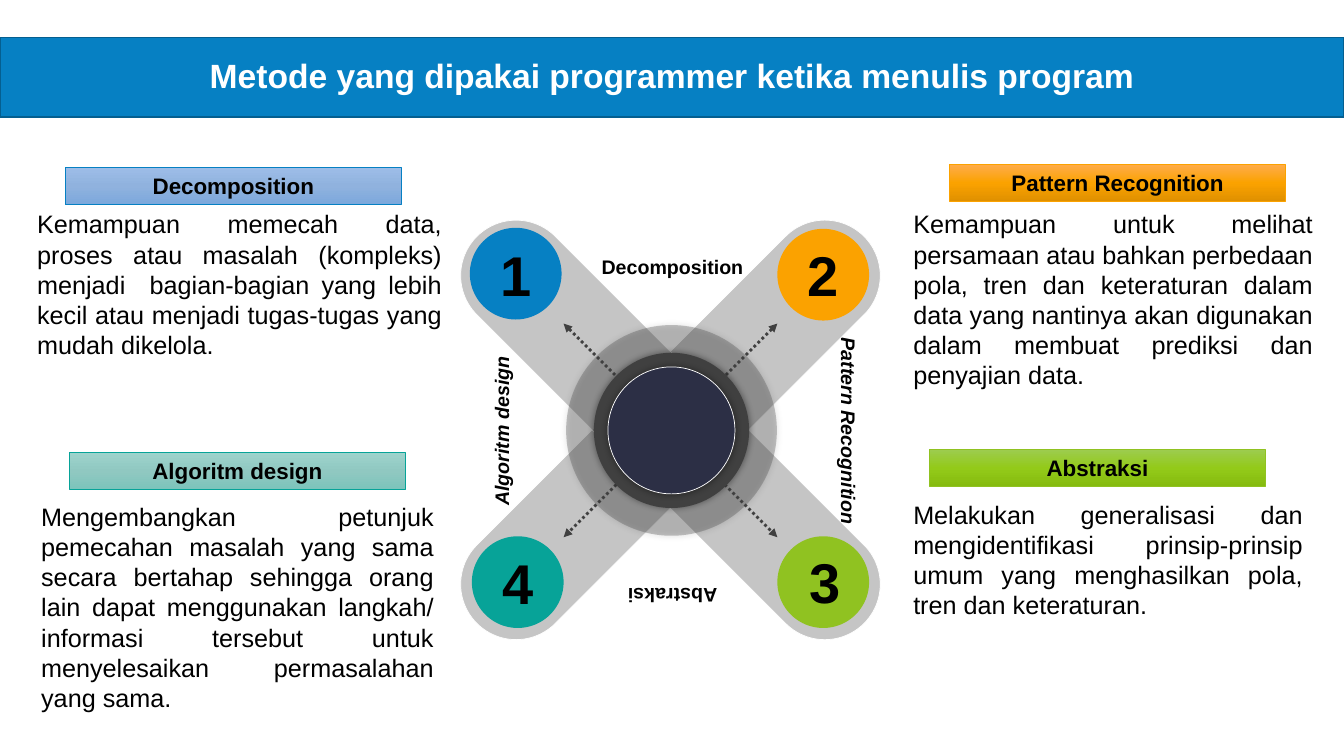
from copy import deepcopy
from typing import NamedTuple

from pptx import Presentation
from pptx.dml.color import RGBColor
from pptx.enum.dml import MSO_LINE
from pptx.enum.shapes import MSO_CONNECTOR, MSO_SHAPE
from pptx.enum.text import MSO_ANCHOR, PP_ALIGN
from pptx.oxml.ns import qn
from pptx.util import Inches, Pt
from lxml import etree

RECT, OVAL = MSO_SHAPE.RECTANGLE, MSO_SHAPE.OVAL
ROUND, DONUT = MSO_SHAPE.ROUNDED_RECTANGLE, MSO_SHAPE.DONUT
CENTER, JUSTIFY = PP_ALIGN.CENTER, PP_ALIGN.JUSTIFY
TOP, MIDDLE = MSO_ANCHOR.TOP, MSO_ANCHOR.MIDDLE
DOTTED, STRAIGHT = MSO_LINE.ROUND_DOT, MSO_CONNECTOR.STRAIGHT
BLACK, WHITE, GREY, BLUE = "000000", "FFFFFF", "404040", "0680C3"
HUB_X, HUB_Y = 6.65, 4.27


class Box(NamedTuple):
    x: float
    y: float
    w: float
    h: float


class WheelLabel(NamedTuple):
    text: str
    x: float
    y: float
    rotation: int
    italic: bool


class Disc(NamedTuple):
    diameter: float
    color: str
    alpha: int
    line: str


class Step(NamedTuple):
    number: str
    x: float
    y: float
    number_x: float
    number_y: float
    color: str


class Card(NamedTuple):
    heading: str
    x: float
    y: float
    gradient: tuple
    line: str
    body: str
    body_box: Box


WHEEL_LABELS = [
    WheelLabel("Decomposition", 5.14, 2.48, 0, False),
    WheelLabel("Pattern Recognition", 5.68, 2.9, 90, True),
    WheelLabel("Algoritm design", 4.65, 2.9, 270, True),
    WheelLabel("Abstraksi", 5.14, 3.33, 180, False),
]
HUB_BASE = Disc(2.09, GREY, 30, "")
HUB_DISCS = [Disc(1.54, GREY, 100, ""), Disc(1.26, "2C2F45", 100, WHITE)]
STEPS = [
    Step("1", 4.66, 2.26, 4.67, 2.34, BLUE),
    Step("2", 7.71, 2.27, 7.71, 2.34, "FBA200"),
    Step("4", 4.68, 5.32, 4.69, 5.39, "07A398"),
    Step("3", 7.71, 5.32, 7.73, 5.38, "90C221"),
]
CARDS = [
    Card("Decomposition", 0.65, 1.66, ("9DBDE8", "90B2DE", "7CA8DC"), BLUE,
         "Kemampuan memecah data, proses atau masalah (kompleks) menjadi  bagian-bagian "
         "yang lebih kecil atau menjadi tugas-tugas yang mudah dikelola.",
         Box(0.27, 2.02, 4.21, 1.62)),
    Card("Pattern Recognition", 9.42, 1.63, ("FFAC4B", "FBA200", "DF9000"), "FBA200",
         "Kemampuan untuk melihat persamaan atau bahkan perbedaan pola, tren dan "
         "keteraturan dalam data yang nantinya akan digunakan dalam membuat prediksi "
         "dan penyajian data.",
         Box(8.96, 2.02, 4.16, 1.92)),
    Card("Algoritm design", 0.69, 4.49, ("9DD3CC", "90C8C1", "7CC4BB"), "07A398",
         "Mengembangkan petunjuk pemecahan masalah yang sama secara bertahap sehingga "
         "orang lain dapat menggunakan langkah/ informasi tersebut untuk menyelesaikan "
         "permasalahan yang sama.",
         Box(0.31, 4.92, 4.09, 2.22)),
    Card("Abstraksi", 9.22, 4.46, ("9DCC4F", "93CA19", "85BB0F"), "90C221",
         "Melakukan generalisasi dan mengidentifikasi prinsip-prinsip umum yang "
         "menghasilkan pola, tren dan keteraturan.",
         Box(8.96, 4.9, 4.06, 1.31)),
]


def rgb(value: str) -> RGBColor:
    return RGBColor.from_string(value)


def child(parent, tag: str, **attrs: str):
    return etree.SubElement(parent, qn(tag), attrs)


def place(box: Box) -> list:
    return [Inches(v) for v in box]


def add_shape(slide, kind, box: Box, fill: str = "", line: str = "",
              width: float = 0.5, alpha: int = 100, rotation: int = 0):
    sp = slide.shapes.add_shape(kind, *place(box))
    sp.shadow.inherit = False
    sp.rotation = rotation
    if fill:
        sp.fill.solid()
        sp.fill.fore_color.rgb = rgb(fill)
        if alpha < 100:
            color = sp._element.spPr.find(qn("a:solidFill"))[0]
            child(color, "a:alpha", val=str(alpha * 1000))
    if line:
        sp.line.color.rgb = rgb(line)
        sp.line.width = Pt(width)
    else:
        sp.line.fill.background()
    return sp


def set_gradient(sp, colors: tuple) -> None:
    sp.fill.gradient()
    sp.fill.gradient_angle = 270
    stops = sp._element.spPr.find(qn("a:gradFill")).find(qn("a:gsLst"))
    stops.append(deepcopy(stops[-1]))
    for i, (stop, color) in enumerate(zip(sp.fill.gradient_stops, colors)):
        stop.position = i / 2
        stop.color.rgb = rgb(color)


def write(sp, text: str, size: float, align=CENTER, anchor=TOP, color: str = BLACK,
          bold: bool = True, italic: bool = False):
    tf = sp.text_frame
    tf.word_wrap = True
    tf.vertical_anchor = anchor
    p = tf.paragraphs[0]
    p.alignment = align
    r = p.add_run()
    r.text = text
    formats = {"name": "Arial", "size": Pt(size), "bold": bold, "italic": italic}
    for name, value in formats.items():
        setattr(r.font, name, value)
    r.font.color.rgb = rgb(color)
    return p


def add_text(slide, box: Box, text: str, size: float, rotation: int = 0, **formats) -> None:
    sp = slide.shapes.add_textbox(*place(box))
    sp.rotation = rotation
    write(sp, text, size, **formats)


def add_disc(slide, disc: Disc) -> None:
    d = disc.diameter
    box = Box(HUB_X + 0.01 - d / 2, HUB_Y - d / 2, d, d)
    sp = add_shape(slide, OVAL, box, disc.color, disc.line, alpha=disc.alpha)
    effects = sp._element.spPr.find(qn("a:effectLst"))
    shadow = child(effects, "a:outerShdw", blurRad=str(Pt(5)), dist="0", dir="0")
    child(child(shadow, "a:srgbClr", val=BLACK), "a:alpha", val="40000")


def add_arrow(slide, x1: float, y1: float, x2: float, y2: float) -> None:
    cxn = slide.shapes.add_connector(STRAIGHT, *[Inches(v) for v in (x1, y1, x2, y2)])
    cxn.line.color.rgb = rgb(GREY)
    cxn.line.width = Pt(2)
    cxn.line.dash_style = DOTTED
    ln = cxn.line._get_or_add_ln()
    for end in ("a:headEnd", "a:tailEnd"):
        child(ln, end, type="triangle")
    child(cxn._element.spPr, "a:effectLst")


def add_wheel(slide) -> None:
    for label in WHEEL_LABELS:
        add_text(slide, Box(label.x, label.y, 3.06, 2.75), label.text, 14,
                 label.rotation, italic=label.italic)
    ring = add_shape(slide, DONUT, Box(4.45, 2.06, 4.41, 4.41), WHITE)
    ring.adjustments[0] = 0.03
    for rotation in (45, 315):
        bar = add_shape(slide, ROUND, Box(6.1, 1.55, 1.1, 5.43), GREY, WHITE,
                        alpha=30, rotation=rotation)
        bar.adjustments[0] = 0.5
    add_disc(slide, HUB_BASE)
    reach = 1.06
    for side in (-reach, reach):
        add_arrow(slide, HUB_X + side, HUB_Y - reach, HUB_X - side, HUB_Y + reach)
    for disc in HUB_DISCS:
        add_disc(slide, disc)
    for step in STEPS:
        add_shape(slide, OVAL, Box(step.x, step.y, 0.91, 0.91), step.color)
        add_text(slide, Box(step.number_x, step.number_y, 0.9, 0.77), step.number, 40)


def add_card(slide, card: Card) -> None:
    sp = add_shape(slide, RECT, Box(card.x, card.y, 3.33, 0.37), line=card.line)
    set_gradient(sp, card.gradient)
    write(sp, card.heading, 16)
    add_text(slide, card.body_box, card.body, 18, align=JUSTIFY, bold=False)


def main() -> None:
    prs = Presentation()
    prs.slide_width, prs.slide_height = Inches(13.33), Inches(7.5)
    slide = prs.slides.add_slide(prs.slide_layouts[6])
    banner = add_shape(slide, RECT, Box(0, 0.37, 13.33, 0.79), BLUE, "045F90", 1)
    p = write(banner, "Metode yang dipakai programmer ketika menulis program", 24,
              anchor=MIDDLE, color=WHITE)
    p.line_spacing = 0.9
    p.space_before = Pt(10)
    add_wheel(slide)
    for card in CARDS:
        add_card(slide, card)
    prs.save("out.pptx")


if __name__ == "__main__":
    main()
